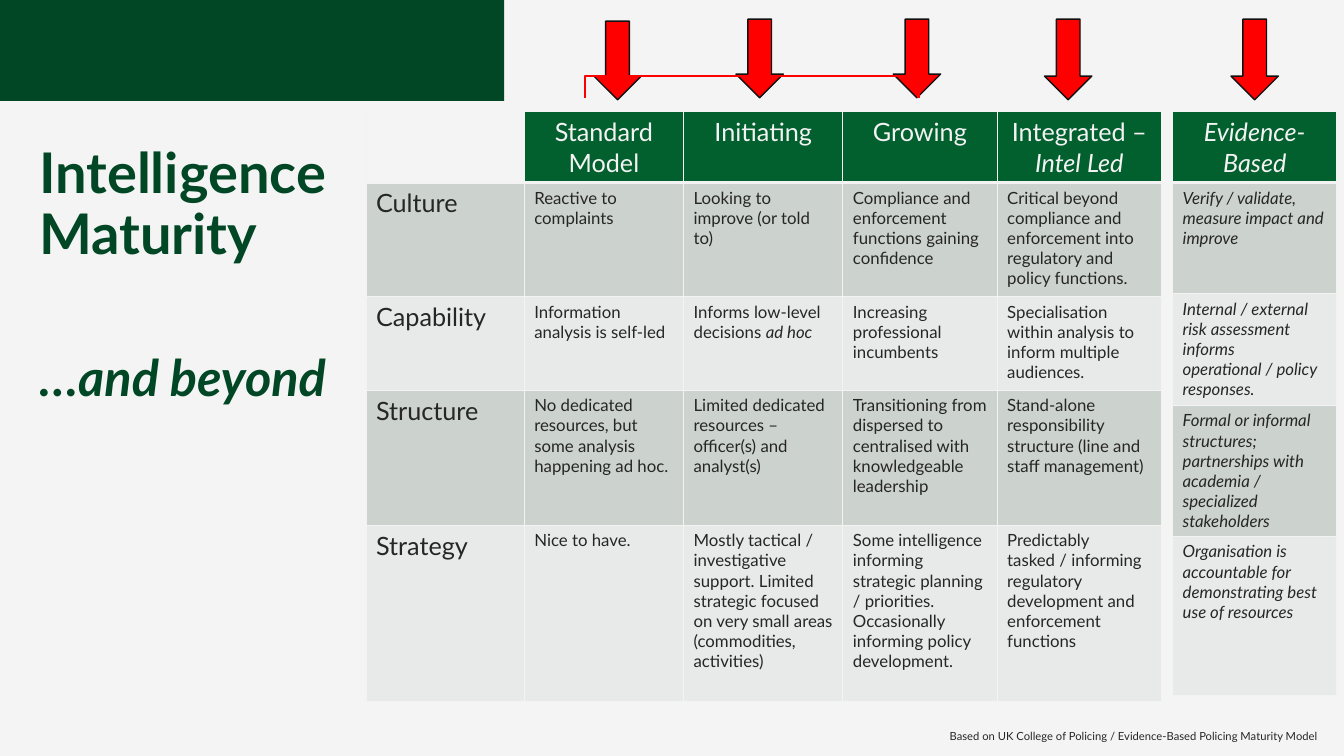
from math import cos, pi, sin

from lxml import etree
from pptx import Presentation
from pptx.dml.color import RGBColor
from pptx.enum.shapes import MSO_SHAPE as Preset
from pptx.enum.text import PP_ALIGN as Align
from pptx.oxml.ns import qn
from pptx.util import Inches, Pt

# ---- Content: text between asterisks is italic ----
COLORS = {
    "background": "F4F4F4", "banner": "014725", "header": "02602F",
    "light": "F3F3F3", "ink": "262626", "dark_band": "CCD2CD",
    "light_band": "E7EAE8", "red": "FF0000", "outline": "111111",
}
FONT = "Lato"
HEADING = "Intelligence Maturity"
SUBHEADING = "*…and beyond*"
CREDIT = "Based on UK College of Policing / Evidence-Based Policing Maturity Model"

MATURITY = [
    ["", "Standard Model", "Initiating", "Growing", "Integrated – *Intel Led*"],
    ["Culture", "Reactive to complaints", "Looking to improve (or told to)",
     "Compliance and enforcement functions gaining confidence",
     "Critical beyond compliance and enforcement into regulatory and policy functions."],
    ["Capability", "Information analysis is self-led",
     "Informs low-level decisions *ad hoc*",
     "Increasing professional incumbents",
     "Specialisation within analysis to inform multiple audiences."],
    ["Structure", "No dedicated resources, but some analysis happening ad hoc.",
     "Limited dedicated resources – officer(s) and analyst(s)",
     "Transitioning from dispersed to centralised with knowledgeable leadership",
     "Stand-alone responsibility structure (line and staff management)"],
    ["Strategy", "Nice to have.",
     "Mostly tactical / investigative support. Limited strategic focused on very "
     "small areas (commodities, activities)",
     "Some intelligence informing strategic planning / priorities. Occasionally "
     "informing policy development.",
     "Predictably tasked / informing regulatory development and enforcement functions"],
]
BEYOND = [
    ["*Evidence- Based*"],
    ["*Verify / validate, measure impact and improve*"],
    ["*Internal / external risk assessment informs operational / policy responses.*"],
    ["*Formal or informal structures; partnerships with academia / specialized stakeholders*"],
    ["*Organisation is accountable for demonstrating best use of resources*"],
]

# ---- Layout, in inches ----
TABLE_TOP = 1.11
MATURITY_GRID = (3.63, [1.57, 1.58, 1.58, 1.53, 1.63], [0.7, 1.13, 0.93, 1.34, 1.75])
BEYOND_GRID = (11.63, [1.63], [0.69, 1.1, 1.11, 1.3, 1.58])
ARROWS = [(5.89, 0.21, 0.78), (7.3, 0.19, 0.78), (8.86, 0.19, 0.78),
          (10.36, 0.19, 0.8), (12.21, 0.19, 0.8)]  # left, top, height
ARROW_WIDTH = 0.47
BANNER_WIDTH, BANNER_HEIGHT, BANNER_STRAIGHT = 4.7, 1.07, 3.48

deck = Presentation()
deck.slide_width, deck.slide_height = Inches(13.33), Inches(7.5)
slide = deck.slides.add_slide(deck.slide_layouts[6])


def rgb(name):
    return RGBColor.from_string(COLORS[name])


def paint(target, name):
    target.fill.solid()
    target.fill.fore_color.rgb = rgb(name)


def write(frame, text, size, color, bold=False):
    paragraph = frame.paragraphs[0]
    for index, part in enumerate(text.split("*")):
        if part:
            run = paragraph.add_run()
            run.text = part
            font = run.font
            font.name, font.size, font.bold = FONT, Pt(size), bold
            font.italic = index % 2 == 1
            font.color.rgb = rgb(color)
    return paragraph


def add_text(box, text, size, color, bold=False, inset=True):
    frame = slide.shapes.add_textbox(*map(Inches, box)).text_frame
    frame.word_wrap = True
    if not inset:
        frame.margin_left = frame.margin_right = 0
        frame.margin_top = frame.margin_bottom = 0
    return write(frame, text, size, color, bold)


def add_borders(cell, bottom):
    properties = cell._tc.get_or_add_tcPr()
    for index, side in enumerate(("lnL", "lnR", "lnT", "lnB")):
        width = bottom if side == "lnB" else 1
        line = etree.Element(qn("a:" + side), w=str(Pt(width)))
        fill = etree.SubElement(line, qn("a:solidFill"))
        etree.SubElement(fill, qn("a:srgbClr"), val=COLORS["light"])
        properties.insert(index, line)


def add_grid(rows, grid):
    left, widths, heights = grid
    table = slide.shapes.add_table(
        len(rows), len(widths), Inches(left), Inches(TABLE_TOP),
        Inches(sum(widths)), Inches(sum(heights))).table
    table.horz_banding = False
    for column, width in zip(table.columns, widths):
        column.width = Inches(width)
    for r, (row, height) in enumerate(zip(rows, heights)):
        table.rows[r].height = Inches(height)
        for c, text in enumerate(row):
            cell = table.cell(r, c)
            is_header = r == 0
            is_label = c == 0 and len(row) > 1
            if not text:
                cell.fill.background()
            elif is_header:
                paint(cell, "header")
            else:
                paint(cell, "dark_band" if r % 2 else "light_band")
            paragraph = write(cell.text_frame, text,
                              18 if is_header or is_label else 12,
                              "light" if is_header else "ink")
            if is_header:
                paragraph.alignment = Align.CENTER
            add_borders(cell, 3 if is_header else 1)


# ---- Background and rounded banner ----
slide.background.fill.solid()
slide.background.fill.fore_color.rgb = rgb("background")
radius = BANNER_WIDTH - BANNER_STRAIGHT
STEPS = 40
curve = [(BANNER_STRAIGHT + radius * cos(pi / 2 * i / STEPS),
          BANNER_HEIGHT * sin(pi / 2 * i / STEPS)) for i in range(STEPS + 1)]
outline = slide.shapes.build_freeform(0, 0, scale=Inches(1))
outline.add_line_segments(curve + [(0, BANNER_HEIGHT)], close=True)
banner = outline.convert_to_shape()
banner.shadow.inherit = False
paint(banner, "banner")
banner.line.fill.background()

# ---- Headings ----
add_text((0.39, 1.44, 3.13, 1.82), HEADING, 40, "banner", True, False).line_spacing = 0.9
add_text((0.39, 3.5, 3.13, 1.16), SUBHEADING, 36, "banner", True, False).line_spacing = 0.9

# ---- Tables and credit ----
add_grid(MATURITY, MATURITY_GRID)
add_grid(BEYOND, BEYOND_GRID)
add_text((9.32, 7.19, 4.01, 0.24), CREDIT, 8, "ink")

# ---- Arrows over each stage ----
for left, top, height in ARROWS:
    arrow = slide.shapes.add_shape(
        Preset.DOWN_ARROW, *map(Inches, (left, top, ARROW_WIDTH, height)))
    arrow.shadow.inherit = False
    paint(arrow, "red")
    arrow.line.color.rgb = rgb("outline")
    arrow.line.width = Pt(1)

# ---- Bracket joining the first three stages ----
bracket = slide.shapes.add_shape(
    Preset.LEFT_BRACE, *map(Inches, (7.24, -0.9, 0.43, 3.31)))
bracket.rotation = 90
bracket.adjustments[0], bracket.adjustments[1] = 0, 0.5
bracket.shadow.inherit = False
bracket.fill.background()
bracket.line.color.rgb = rgb("red")
bracket.line.width = Pt(1.75)

deck.save("out.pptx")
